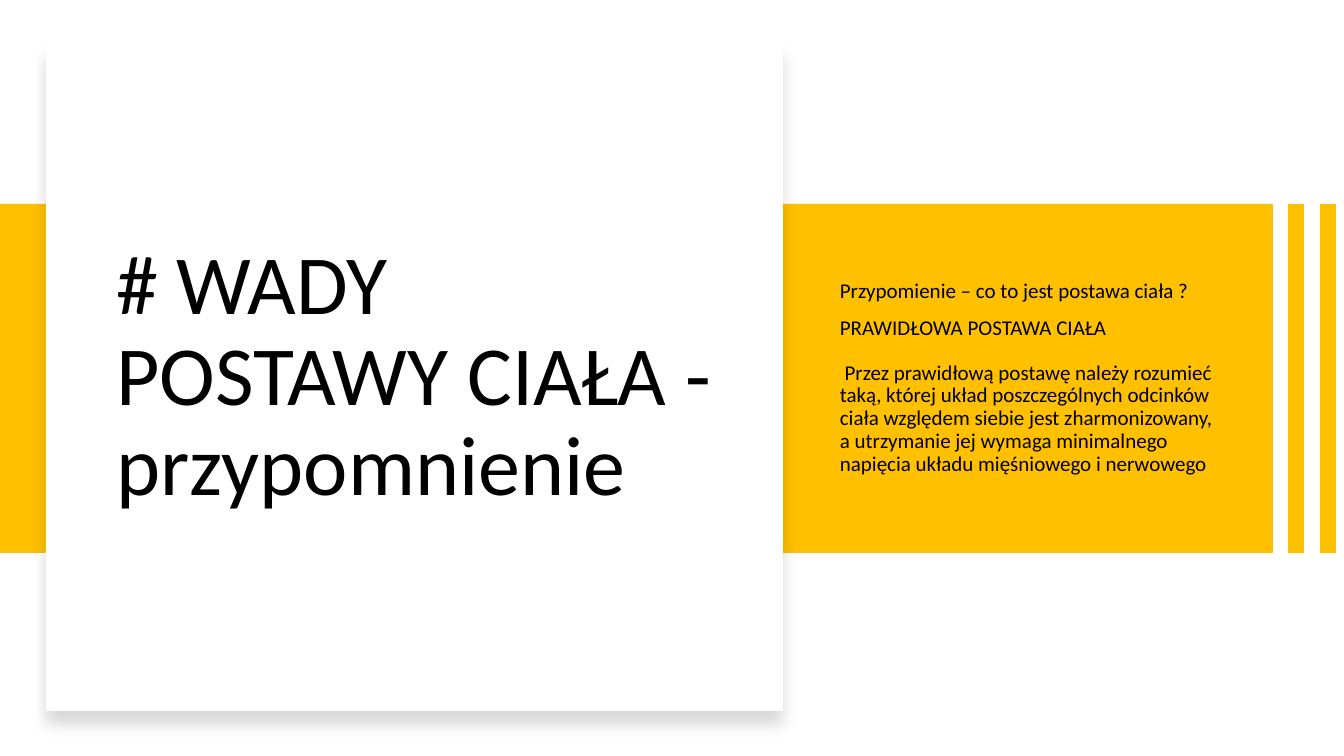
from lxml.etree import SubElement
from pptx import Presentation
from pptx.dml.color import RGBColor
from pptx.enum.shapes import MSO_CONNECTOR, MSO_SHAPE
from pptx.enum.text import MSO_ANCHOR, MSO_AUTO_SIZE, PP_ALIGN
from pptx.oxml.ns import qn
from pptx.util import Emu, Pt

SCALE = 914400 / 100.8
COLORS = {"gold": "FFC000", "white": "FFFFFF", "black": "000000"}
FONT = "Calibri"


def px(*sizes):
    return [Emu(round(size * SCALE)) for size in sizes]


def color(name):
    return RGBColor.from_string(COLORS[name])


class Board:
    def __init__(self, deck):
        self.slide = deck.slides.add_slide(deck.slide_layouts[5])
        self.shapes = self.slide.shapes

    def rect(self, box, fill):
        shape = self.shapes.add_shape(MSO_SHAPE.RECTANGLE, *px(*box))
        shape.shadow.inherit = False
        shape.fill.solid()
        shape.fill.fore_color.rgb = color(fill)
        shape.line.fill.background()
        return shape

    def stripe(self, x, top, end, tone, width):
        line = self.shapes.add_connector(
            MSO_CONNECTOR.STRAIGHT, *px(x, top, x, end))
        line.line.color.rgb = color(tone)
        line.line.width = Pt(width)
        SubElement(line._element.spPr, qn("a:effectLst"))

    def shade(self, shape, blur, dist, alpha):
        effects = shape._element.spPr.find(qn("a:effectLst"))
        outer = SubElement(
            effects, qn("a:outerShdw"), blurRad=str(Pt(blur)),
            dist=str(Pt(dist)), dir="5400000", algn="t", rotWithShape="0")
        tone = SubElement(outer, qn("a:srgbClr"), val=COLORS["black"])
        SubElement(tone, qn("a:alpha"), val=str(alpha * 1000))

    def title(self, box, text, size):
        shape = self.shapes.title
        shape.left, shape.top, shape.width, shape.height = px(*box)
        # Bring the title in front of the card
        self.shapes._spTree.append(shape._element)
        self.fill(shape.text_frame, [(text, 0)], size)

    def text(self, box, parts, size):
        self.fill(self.shapes.add_textbox(*px(*box)).text_frame, parts, size)

    def fill(self, frame, parts, size):
        frame.word_wrap = True
        frame.auto_size = MSO_AUTO_SIZE.NONE
        frame.vertical_anchor = MSO_ANCHOR.MIDDLE
        for i, (text, gap) in enumerate(parts):
            para = frame.add_paragraph() if i else frame.paragraphs[0]
            para.text = text
            para.alignment = PP_ALIGN.LEFT
            para.line_spacing = 0.9
            para.space_before = Pt(gap)
            para.font.name = FONT
            para.font.size = Pt(size)
            para.font.color.rgb = color("black")


def main():
    deck = Presentation()
    deck.slide_width, deck.slide_height = px(1344, 756)
    board = Board(deck)

    # Gold band with two stripes
    top, height = 204, 349
    board.rect((0, top, 1273, height), "gold")
    for x in (1296, 1328):
        board.stripe(x, top, top + height, "gold", 12)

    # White card with the title
    card = board.rect((46, 43, 737, 668), "white")
    board.shade(card, blur=11, dist=10, alpha=15)
    board.title((106, 107, 617, 542),
                "# WADY POSTAWY CIAŁA - przypomnienie", 60)

    # Definition on the band
    board.text((830, 261, 399, 234), [
        ("Przypomienie – co to jest postawa ciała ?", 10),
        ("PRAWIDŁOWA POSTAWA CIAŁA", 10),
        (" Przez prawidłową postawę należy rozumieć taką, której układ "
         "poszczególnych odcinków ciała względem siebie jest "
         "zharmonizowany, a utrzymanie jej wymaga minimalnego napięcia "
         "układu mięśniowego i nerwowego", 16),
    ], 15)

    deck.save("out.pptx")


if __name__ == "__main__":
    main()
